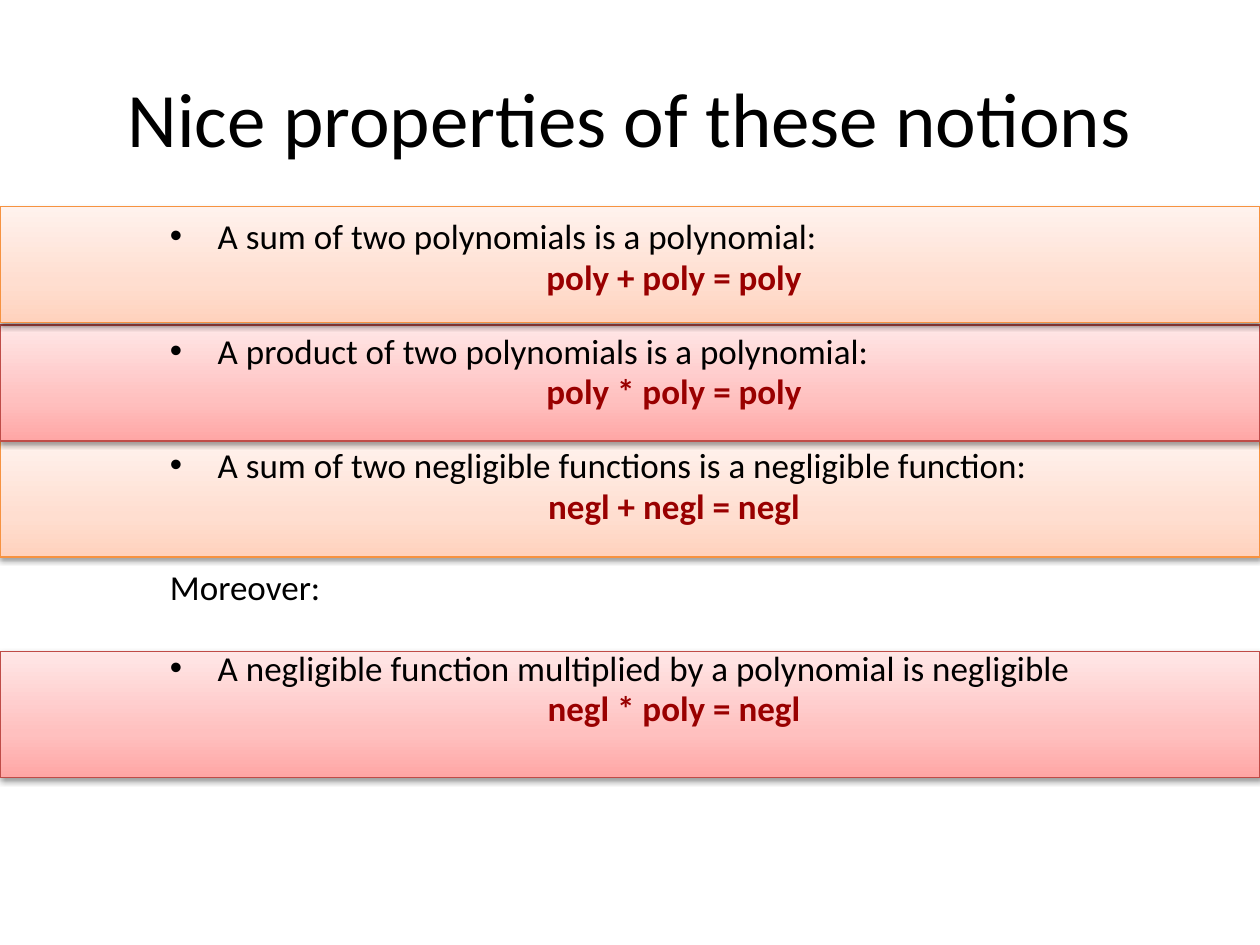
from pptx import Presentation
from pptx.dml.color import RGBColor
from pptx.enum.shapes import MSO_SHAPE
from pptx.enum.text import MSO_ANCHOR, PP_ALIGN
from pptx.oxml import parse_xml
from pptx.oxml.ns import nsdecls, qn
from pptx.util import Inches, Pt

RECTANGLE = MSO_SHAPE.RECTANGLE
MIDDLE, TOP = MSO_ANCHOR.MIDDLE, MSO_ANCHOR.TOP
CENTER, LEFT = PP_ALIGN.CENTER, PP_ALIGN.LEFT

THEME = {
    "font": "Calibri",
    "title_size": 44,
    "body_size": 20,
    "text": "000000",
    "formula": "990000",
    "orange": {"line": "F69240", "stops": [(0, "FFD2BD"), (35, "FFDED0"), (100, "FFF2ED")]},
    "red": {"line": "BF4C48", "stops": [(0, "FFA6A5"), (35, "FFC0BF"), (100, "FFE7E7")]},
}

SLIDE_WIDTH, SLIDE_HEIGHT = 10, 7.5
TITLE = "Nice properties of these notions"

# top, height, colour
BANDS = [
    (1.64, 0.92, "orange"),
    (2.58, 0.92, "red"),
    (3.5, 0.92, "orange"),
    (5.17, 1, "red"),
]

# kind, text, space before in points
BODY = [
    ("bullet", "A sum of two polynomials is a polynomial:", 4),
    ("formula", "poly + poly = poly", 4),
    ("bullet", "A product of two polynomials is a polynomial:", 23),
    ("formula", "poly * poly = poly", 4),
    ("bullet", "A sum of two negligible functions is a negligible function:", 23),
    ("formula", "negl + negl = negl", 4),
    ("plain", "Moreover:", 27),
    ("bullet", "A negligible function multiplied by a polynomial is negligible", 27),
    ("formula", "negl * poly = negl", 4),
]


def add_band(slide, top, height, colour):
    shape = slide.shapes.add_shape(
        RECTANGLE, 0, Inches(top), Inches(SLIDE_WIDTH), Inches(height))
    style = THEME[colour]
    shape.line.color.rgb = RGBColor.from_string(style["line"])
    shape.line.width = Pt(0.75)
    stops = "".join(
        f'<a:gs pos="{position * 1000}"><a:srgbClr val="{value}"/></a:gs>'
        for position, value in style["stops"])
    properties = shape.element.spPr
    properties.find(qn("a:ln")).addprevious(parse_xml(
        f'<a:gradFill {nsdecls("a")} rotWithShape="1"><a:gsLst>{stops}</a:gsLst>'
        '<a:lin ang="16200000" scaled="0"/></a:gradFill>'))
    properties.append(parse_xml(
        f'<a:effectLst {nsdecls("a")}>'
        '<a:outerShdw blurRad="40000" dist="20000" dir="5400000" rotWithShape="0">'
        '<a:srgbClr val="000000"><a:alpha val="38000"/></a:srgbClr>'
        '</a:outerShdw></a:effectLst>'))


def add_text_frame(slide, left, top, width, height, anchor):
    box = slide.shapes.add_textbox(
        Inches(left), Inches(top), Inches(width), Inches(height))
    box.text_frame.word_wrap = True
    box.text_frame.vertical_anchor = anchor
    return box.text_frame


def write(paragraph, text, size, colour, alignment, bold=False):
    paragraph.text = text
    paragraph.alignment = alignment
    font = paragraph.runs[0].font
    font.name = THEME["font"]
    font.size = Pt(size)
    font.bold = bold
    font.color.rgb = RGBColor.from_string(colour)


def set_list_format(paragraph, bulleted):
    """Hang the first line and show or hide the bullet."""
    properties = paragraph._p.get_or_add_pPr()
    properties.set("marL", str(Inches(0.38)))
    properties.set("indent", str(Inches(-0.38)))
    if bulleted:
        properties.append(parse_xml(f'<a:buFont {nsdecls("a")} typeface="Arial"/>'))
        properties.append(parse_xml(f'<a:buChar {nsdecls("a")} char="•"/>'))
    else:
        properties.append(parse_xml(f'<a:buNone {nsdecls("a")}/>'))


def add_body(slide):
    text_frame = add_text_frame(slide, 1.25, 1.72, 8.2, 5.25, TOP)
    for index, (kind, text, space_before) in enumerate(BODY):
        paragraph = text_frame.add_paragraph() if index else text_frame.paragraphs[0]
        is_formula = kind == "formula"
        write(paragraph, text, THEME["body_size"],
              THEME["formula" if is_formula else "text"],
              CENTER if is_formula else LEFT, is_formula)
        paragraph.line_spacing = 0.8
        paragraph.space_before = Pt(space_before)
        set_list_format(paragraph, kind == "bullet")


def main():
    presentation = Presentation()
    presentation.slide_width = Inches(SLIDE_WIDTH)
    presentation.slide_height = Inches(SLIDE_HEIGHT)
    slide = presentation.slides.add_slide(presentation.slide_layouts[6])
    for band in reversed(BANDS):
        add_band(slide, *band)
    title_frame = add_text_frame(slide, 0.5, 0.3, 9, 1.25, MIDDLE)
    write(title_frame.paragraphs[0], TITLE, THEME["title_size"], THEME["text"], CENTER)
    add_body(slide)
    presentation.save("out.pptx")


if __name__ == "__main__":
    main()
